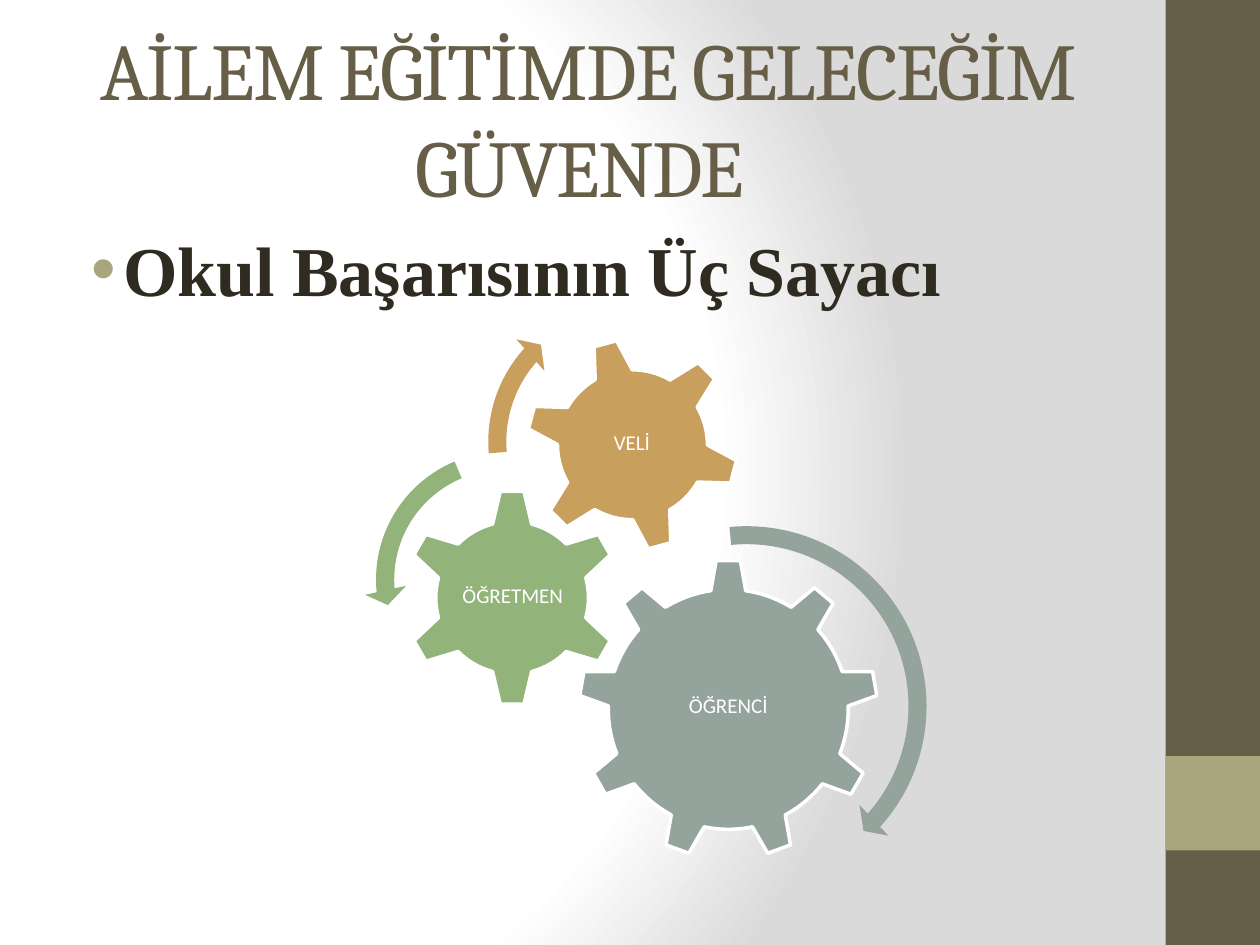
from pptx import Presentation
from pptx.dml.color import RGBColor
from pptx.enum.shapes import MSO_SHAPE
from pptx.enum.text import MSO_ANCHOR, PP_ALIGN
from pptx.oxml import parse_xml
from pptx.oxml.ns import nsdecls
from pptx.util import Inches, Pt

RECT = MSO_SHAPE.RECTANGLE
GEAR6 = MSO_SHAPE.GEAR_6
GEAR9 = MSO_SHAPE.GEAR_9
TURN = MSO_SHAPE.CIRCULAR_ARROW
BACK = MSO_SHAPE.LEFT_CIRCULAR_ARROW
MID, TOP = MSO_ANCHOR.MIDDLE, MSO_ANCHOR.TOP
CENTER, LEFT = PP_ALIGN.CENTER, PP_ALIGN.LEFT

BROWN, SAND, INK, WHITE = "675E47", "A9A57C", "2F2B20", "FFFFFF"
GRAY, GREEN, GOLD = "95A39D", "92B47A", "C89F5D"

GEARS = [
    (GEAR9, (1.7, 1.94, 2.38), 0, GRAY, "ÖĞRENCİ", (2.18, 2.5, 1.42, 1.22)),
    (GEAR6, (0.31, 1.38, 1.73), 0, GREEN, "ÖĞRETMEN ", (0.75, 1.81, 0.86, 0.85)),
    (GEAR6, (1.28, 0.18, 1.7), 345, GOLD, "VELİ", (1.65, 0.55, 0.95, 0.95)),
]
ARROWS = [
    (TURN, (1.51, 1.58, 3.05), GRAY, (0.047, 2.99, 25.104, 158.737, 0.055)),
    (BACK, (0, 0.99, 2.22), GREEN, (0.065, 4.3, 104.891, 148.378, 0.075)),
    (TURN, (0.89, -0.19, 2.39), GOLD, (0.06, 3.941, 133.138, 105.082, 0.07)),
]


def tint(code):
    return RGBColor.from_string(code)


def apply(item, vals):
    for key, val in vals.items():
        setattr(item, key, val)


def shape(slide, kind, box, fill, line=None):
    item = slide.shapes.add_shape(kind, *map(Inches, box))
    item.shadow.inherit = False
    item.fill.solid()
    item.fill.fore_color.rgb = tint(fill)
    if line:
        item.line.color.rgb = tint(line)
        item.line.width = Pt(2)
    else:
        item.line.fill.background()
    return item


def write(slide, box, text, font, color, frame, para):
    body = slide.shapes.add_textbox(*map(Inches, box)).text_frame
    apply(body, {"word_wrap": True, **frame})
    line = body.paragraphs[0]
    apply(line, para)
    run = line.add_run()
    run.text = text
    apply(run.font, font)
    run.font.color.rgb = tint(color)
    return line


def backdrop(slide):
    slide.background.fill.solid()
    stops = "".join(
        f'<a:gs pos="{pos}000"><a:srgbClr val="{code}"/></a:gs>'
        for pos, code in ((0, WHITE), (75, WHITE), (100, "DADADA"))
    )
    prop = slide.background._cSld.bg.bgPr
    prop.replace(prop[0], parse_xml(
        f'<a:gradFill {nsdecls("a")} rotWithShape="1"><a:gsLst>{stops}</a:gsLst>'
        '<a:path path="circle"><a:fillToRect l="20000" t="50000" r="100000" '
        'b="50000"/></a:path></a:gradFill>'))


def side(slide, box):
    x, y, w, h = box
    shape(slide, RECT, box, BROWN)
    shape(slide, RECT, (x, y + h * 0.8, w, w), SAND)


def title(slide, box):
    line = write(slide, box, "AİLEM EĞİTİMDE GELECEĞİM GÜVENDE ",
                 {"name": "Cambria", "size": Pt(46)}, BROWN,
                 {"vertical_anchor": MID}, {"alignment": CENTER})
    line.runs[0].font._element.set("spc", "-100")


def topic(slide, box):
    line = write(slide, box, "Okul Başarısının Üç Sayacı",
                 {"name": "Times New Roman", "size": Pt(40), "bold": True}, INK,
                 {"vertical_anchor": TOP},
                 {"alignment": LEFT, "space_before": Pt(8)})
    prop = line._p.get_or_add_pPr()
    prop.set("marL", str(Inches(0.38)))
    prop.set("indent", str(Inches(-0.25)))
    for part in (f'<a:buClr {nsdecls("a")}><a:srgbClr val="{SAND}"/></a:buClr>',
                 f'<a:buFont {nsdecls("a")} typeface="Arial"/>',
                 f'<a:buChar {nsdecls("a")} char="•"/>'):
        prop.append(parse_xml(part))


def wheels(slide, box):
    x, y = box[:2]
    pad = {f"margin_{edge}": Inches(0.02)
           for edge in ("left", "top", "right", "bottom")}
    for kind, (dx, dy, size), turn, fill, text, (tx, ty, w, h) in GEARS:
        gear = shape(slide, kind, (x + dx, y + dy, size, size), fill, WHITE)
        gear.rotation = turn
        write(slide, (x + tx, y + ty, w, h), text,
              {"name": "Calibri", "size": Pt(12)}, WHITE,
              {"vertical_anchor": MID, **pad},
              {"alignment": CENTER, "line_spacing": 0.9})
    for kind, (dx, dy, size), fill, bends in ARROWS:
        arrow = shape(slide, kind, (x + dx, y + dy, size, size), fill)
        for i, bend in enumerate(bends):
            arrow.adjustments[i] = bend


def main():
    deck = Presentation()
    apply(deck, {"slide_width": Inches(10), "slide_height": Inches(7.5)})
    slide = deck.slides.add_slide(deck.slide_layouts[6])
    backdrop(slide)
    side(slide, (9.25, 0, 0.75, 7.5))
    title(slide, (0.5, 0.3, 8.33, 1.25))
    topic(slide, (0.5, 1.75, 8.33, 5.25))
    wheels(slide, (2.89, 2.5, 4.56, 4.63))
    deck.save("out.pptx")


if __name__ == "__main__":
    main()
